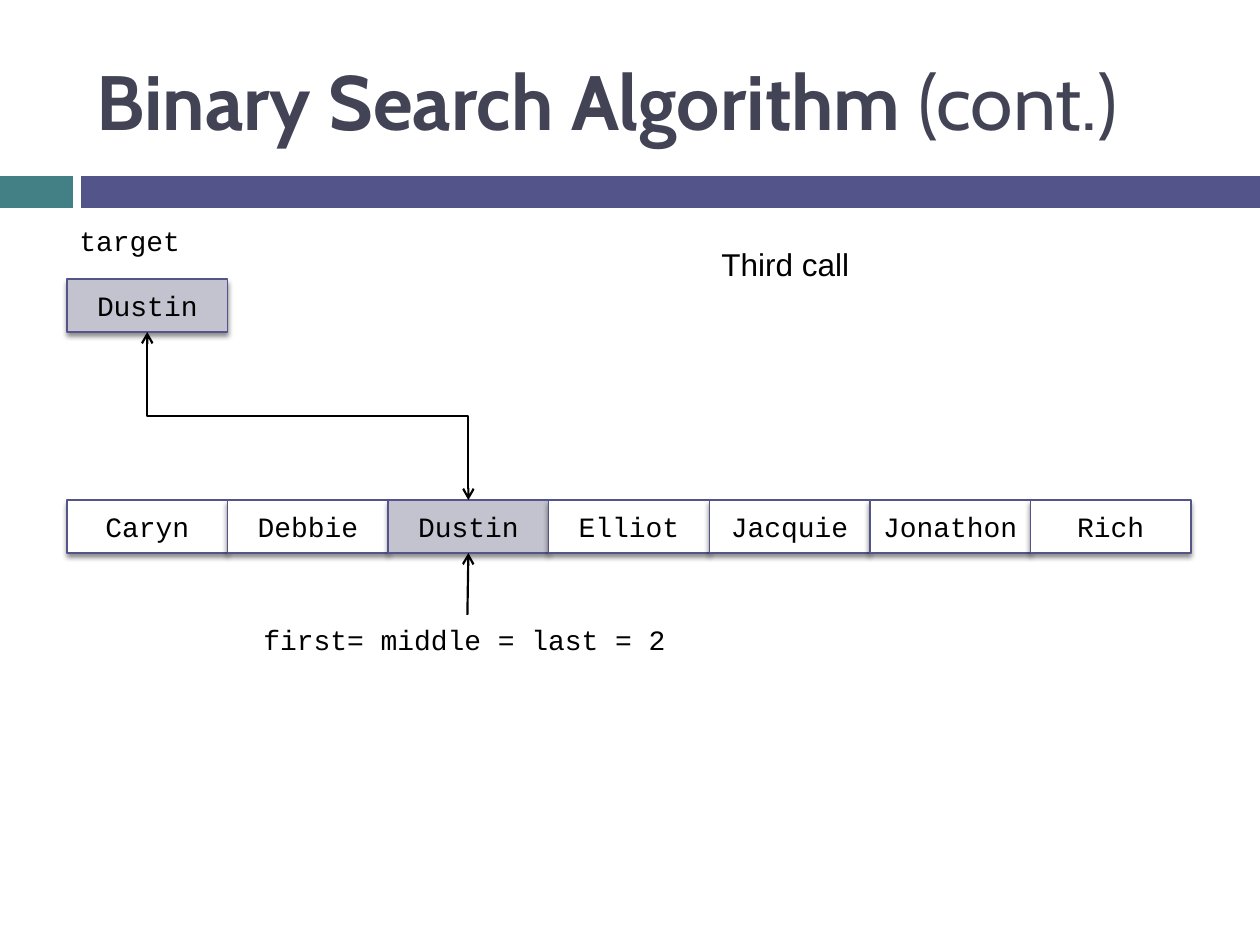
from dataclasses import dataclass
from lxml.etree import SubElement
from pptx import Presentation
from pptx.dml.color import RGBColor
from pptx.enum.shapes import MSO_CONNECTOR, MSO_SHAPE
from pptx.enum.text import MSO_ANCHOR, MSO_AUTO_SIZE, PP_ALIGN
from pptx.oxml import parse_xml
from pptx.oxml.ns import nsdecls, qn
from pptx.util import Pt

PX = 914400 / 126
SHADOW = (
    f'<a:effectLst {nsdecls("a")}>'
    '<a:outerShdw blurRad="38100" dist="30480" dir="5400000" rotWithShape="0">'
    '<a:srgbClr val="000000"><a:alpha val="45000"/></a:srgbClr>'
    '</a:outerShdw></a:effectLst>'
)


@dataclass(frozen=True)
class Theme:
    """Colours, fonts and type sizes of the slide."""
    ink: str = "000000"
    title: str = "424456"
    teal: str = "438086"
    indigo: str = "53548A"
    plain: str = "FFFFFF"
    match: str = "C3C3CF"
    head: str = "Cabin"
    code: str = "Courier New"
    sans: str = "Arial"
    big: int = 44
    mid: int = 18
    small: int = 16


def emu(*sizes):
    """Turn px lengths into EMU."""
    return [round(size * PX) for size in sizes]


def rgb(code):
    """Read a hex colour."""
    return RGBColor.from_string(code)


class Deck:
    """Draws styled elements on the current slide."""

    def __init__(self, prs, theme):
        """Add a title-only slide."""
        self.theme = theme
        self.slide = prs.slides.add_slide(prs.slide_layouts[5])
        self.shapes = self.slide.shapes

    def style(self, run, font, size, color, bold=False):
        """Format one run."""
        run.font.name, run.font.size = font, Pt(size)
        run.font.color.rgb, run.font.bold = rgb(color), bold

    def title(self, strong, light, *box):
        """Fill the title with a bold and a light part."""
        shape = self.shapes.title
        shape.left, shape.top, shape.width, shape.height = emu(*box)
        frame = shape.text_frame
        frame.auto_size = MSO_AUTO_SIZE.NONE
        frame.vertical_anchor = MSO_ANCHOR.MIDDLE
        para = frame.paragraphs[0]
        para.alignment = PP_ALIGN.LEFT
        for text, bold in ((strong, True), (light, False)):
            run = para.add_run()
            run.text = text
            self.style(run, self.theme.head, self.theme.big, self.theme.title, bold)

    def bar(self, fill, *box):
        """Draw a flat bar."""
        shape = self.shapes.add_shape(MSO_SHAPE.RECTANGLE, *emu(*box))
        shape.shadow.inherit = False
        shape.fill.solid()
        shape.fill.fore_color.rgb = rgb(fill)
        shape.line.fill.background()
        return shape

    def cell(self, text, fill, *box):
        """Draw an outlined box holding one name."""
        shape = self.bar(fill, *box)
        shape.line.color.rgb = rgb(self.theme.indigo)
        shape.line.width = Pt(0.79)
        props = shape._element.spPr
        props.replace(props.find(qn("a:effectLst")), parse_xml(SHADOW))
        frame = shape.text_frame
        frame.text, frame.word_wrap = text, False
        frame.vertical_anchor = MSO_ANCHOR.MIDDLE
        para = frame.paragraphs[0]
        para.alignment = PP_ALIGN.CENTER
        self.style(para.runs[0], self.theme.code, self.theme.small, self.theme.ink)

    def label(self, text, font, size, *box, wrap=False):
        """Write a line of free text."""
        frame = self.shapes.add_textbox(*emu(*box)).text_frame
        frame.text, frame.word_wrap = text, wrap
        frame.auto_size = MSO_AUTO_SIZE.SHAPE_TO_FIT_TEXT
        self.style(frame.paragraphs[0].runs[0], font, size, self.theme.ink)

    def arrow(self, kind, *ends, heads=("tailEnd",)):
        """Join two points with arrowheads."""
        link = self.shapes.add_connector(kind, *emu(*ends))
        link.line.color.rgb = rgb(self.theme.ink)
        link.line.width = Pt(1.25)
        for head in heads:
            SubElement(link.line._get_or_add_ln(), qn(f"a:{head}"), type="arrow")
        SubElement(link._element.spPr, qn("a:effectLst"))
        return link

    def elbow(self, left, top, right, low):
        """Join two points by a down-across-down path with two heads."""
        mid, axis = (left + right) / 2, (top + low) / 2
        half, reach = (low - top) / 2, (right - left) / 2
        link = self.arrow(MSO_CONNECTOR.ELBOW, mid + half, axis - reach,
                          mid - half, axis + reach, heads=("headEnd", "tailEnd"))
        link._element.spPr.xfrm.set("rot", "16200000")


def main():
    """Build the slide."""
    prs = Presentation()
    prs.slide_width, prs.slide_height = emu(1260, 945)
    theme = Theme()
    deck = Deck(prs, theme)
    deck.bar(theme.teal, 0, 176, 73, 32)
    deck.bar(theme.indigo, 81, 176, 1179, 32)
    deck.title("Binary Search Algorithm ", "(cont.)", 84, 32, 1124, 136)

    names = ["Caryn", "Debbie", "Dustin", "Elliot", "Jacquie", "Jonathon", "Rich"]
    target = "Dustin"
    left, row, goal, high = 67, 500, 279, 53
    wide = 1124 / len(names)
    for i, name in enumerate(names):
        fill = theme.match if name == target else theme.plain
        deck.cell(name, fill, left + i * wide, row, wide, high)
    deck.cell(target, theme.match, left, goal, wide, high)

    start = left + wide / 2
    found = start + names.index(target) * wide
    deck.label("target", theme.code, theme.small, 67, 217, 127, 47)
    deck.arrow(MSO_CONNECTOR.STRAIGHT, found - 1, 615, found, row + high)
    deck.label("first= middle = last = 2", theme.code, theme.small, 251, 616, 433, 47)
    deck.elbow(start, goal + high, found, row)
    deck.label("Third call", theme.sans, theme.mid, 709, 239, 393, 50, wrap=True)
    prs.save("out.pptx")


if __name__ == "__main__":
    main()
